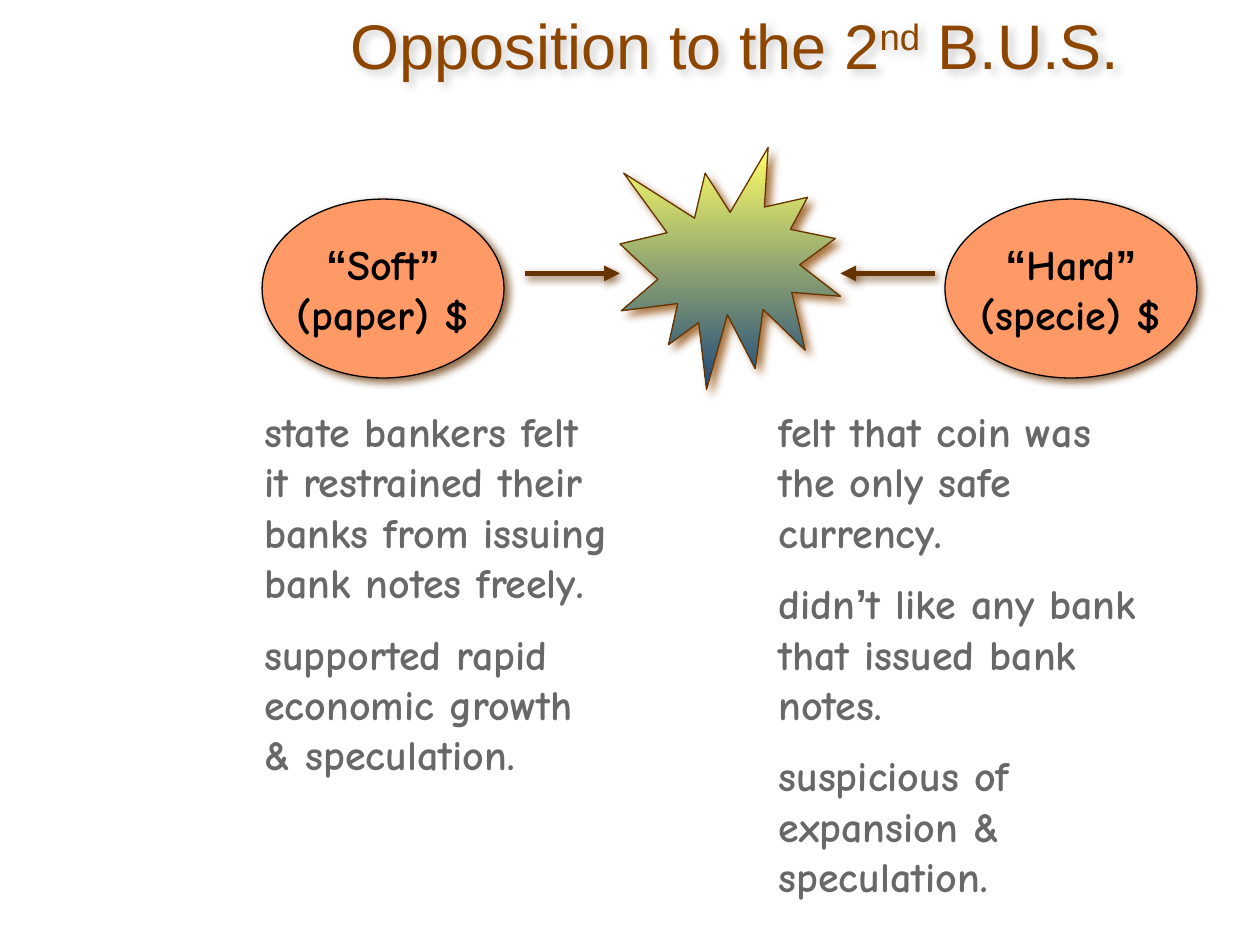
from lxml import etree
from pptx import Presentation
from pptx.dml.color import RGBColor
from pptx.enum.shapes import MSO_CONNECTOR, MSO_SHAPE
from pptx.enum.text import MSO_ANCHOR, MSO_AUTO_SIZE, PP_ALIGN
from pptx.oxml.ns import qn
from pptx.util import Inches, Pt

OVAL = MSO_SHAPE.OVAL
BURST = MSO_SHAPE.EXPLOSION1
LINE = MSO_CONNECTOR.STRAIGHT
CENTER, LEFT = PP_ALIGN.CENTER, PP_ALIGN.LEFT
MIDDLE = MSO_ANCHOR.MIDDLE
GROW = MSO_AUTO_SIZE.SHAPE_TO_FIT_TEXT

SANS, COMIC = "Arial", "Comic Neue"
BROWN, RUST, GRAY, BLACK = "663300", "8C4600", "686868", "000000"
ORANGE, YELLOW, BLUE = "FF9966", "FFFF66", "1F497D"


def rgb(code):
    return RGBColor.from_string(code)


def add_shadow(shape, color, dist=3, angle=45, alpha=75):
    """Put a soft outer shadow after the fill and line."""
    props = shape._element.spPr
    fx = etree.SubElement(props, qn("a:effectLst"))
    outer = etree.SubElement(fx, qn("a:outerShdw"), blurRad=str(Pt(5)),
                             dist=str(Pt(dist)), dir=str(angle * 60000),
                             algn="ctr", rotWithShape="0")
    tint = etree.SubElement(outer, qn("a:srgbClr"), val=color)
    etree.SubElement(tint, qn("a:alpha"), val=str(alpha * 1000))


def add_run(para, text, font, size, color, bold):
    """Add one run; line feeds become line breaks."""
    for i, part in enumerate(text.split("\n")):
        if i:
            para.add_line_break()
        if part:
            run = para.add_run()
            run.text = part
            run.font.name = font
            run.font.size = Pt(size)
            run.font.bold = bold
            run.font.color.rgb = rgb(color)
    return para.runs[-1]


def add_para(frame, first, runs, color, align=LEFT, gap=0):
    para = frame.paragraphs[0] if first else frame.add_paragraph()
    para.alignment = align
    para.space_before = Pt(gap)
    for text, font in runs:
        add_run(para, text, font, 24, color, True)


def add_box(slide, x, y, w, h):
    box = slide.shapes.add_textbox(Inches(x), Inches(y), Inches(w), Inches(h))
    box.text_frame.word_wrap = True
    box.text_frame.auto_size = GROW
    return box


def add_title(slide):
    box = add_box(slide, 1.75, 0, 8.17, 0.71)
    para = box.text_frame.paragraphs[0]
    para.alignment = CENTER
    para.space_before = Pt(18)
    for text, base in (("Opposition to the 2", 0), ("nd", 30), (" B.U.S.", 0)):
        run = add_run(para, text, SANS, 36, RUST, False)
        if base:
            run.font._element.set("baseline", str(base * 1000))
    add_shadow(box, BLACK, alpha=20)


def add_form(slide, kind, x, y, w, h, edge):
    shape = slide.shapes.add_shape(kind, Inches(x), Inches(y),
                                   Inches(w), Inches(h))
    shape.line.color.rgb = rgb(edge)
    shape.line.width = Pt(0.75)
    return shape


def add_oval(slide, x, w, word, note):
    oval = add_form(slide, OVAL, x, 1.58, w, 1.42, BLACK)
    oval.fill.solid()
    oval.fill.fore_color.rgb = rgb(ORANGE)
    add_shadow(oval, BROWN)
    frame = oval.text_frame
    frame.word_wrap = False
    frame.vertical_anchor = MIDDLE
    runs = [("“", SANS), (word, COMIC), ("”\n", SANS), (note, COMIC)]
    add_para(frame, True, runs, BLACK, CENTER)


def add_burst(slide):
    burst = add_form(slide, BURST, 4.92, 1.17, 1.75, 1.92, BROWN)
    burst.fill.gradient()
    burst.fill.gradient_angle = 270
    for stop, color in zip(burst.fill.gradient_stops, (YELLOW, BLUE)):
        stop.color.rgb = rgb(color)
    stops = burst.fill.gradient_stops
    stops[0].position, stops[1].position = 0, 1
    add_shadow(burst, RUST, 4.2)


def add_arrow(slide, start, end, dist, angle):
    y = Inches(2.17)
    arrow = slide.shapes.add_connector(LINE, Inches(start), y, Inches(end), y)
    arrow.line.color.rgb = rgb(BROWN)
    arrow.line.width = Pt(3)
    etree.SubElement(arrow.line._get_or_add_ln(), qn("a:tailEnd"),
                     type="triangle")
    add_shadow(arrow, BROWN, dist, angle)


def add_notes(slide, x, w, h, paras):
    frame = add_box(slide, x, 3.17, w, h).text_frame
    for i, runs in enumerate(paras):
        add_para(frame, i == 0, runs, GRAY, gap=12)


def main():
    prs = Presentation()
    prs.slide_width, prs.slide_height = Inches(10), Inches(7.5)
    slide = prs.slides.add_slide(prs.slide_layouts[6])

    add_title(slide)

    # The two sides
    add_oval(slide, 2.08, 1.92, "Soft", "(paper) $")
    add_oval(slide, 7.5, 2, "Hard", "(specie) $")

    # Their arguments
    add_notes(slide, 2, 3.67, 3.13, [
        [("state bankers felt\nit restrained their\n"
          "banks from issuing\nbank notes freely.", COMIC)],
        [("supported rapid\neconomic growth\n& speculation.", COMIC)],
    ])
    add_notes(slide, 6.08, 3.92, 4.14, [
        [("felt that coin was\nthe only safe\ncurrency.", COMIC)],
        [("didn", COMIC), ("’", SANS),
         ("t like any bank\nthat issued bank\nnotes.", COMIC)],
        [("suspicious of\nexpansion &\nspeculation.", COMIC)],
    ])

    # The clash between them
    add_burst(slide)
    add_arrow(slide, 4.17, 4.92, 2.3, 65)
    add_arrow(slide, 7.42, 6.67, 3, 45)

    prs.save("out.pptx")


if __name__ == "__main__":
    main()
